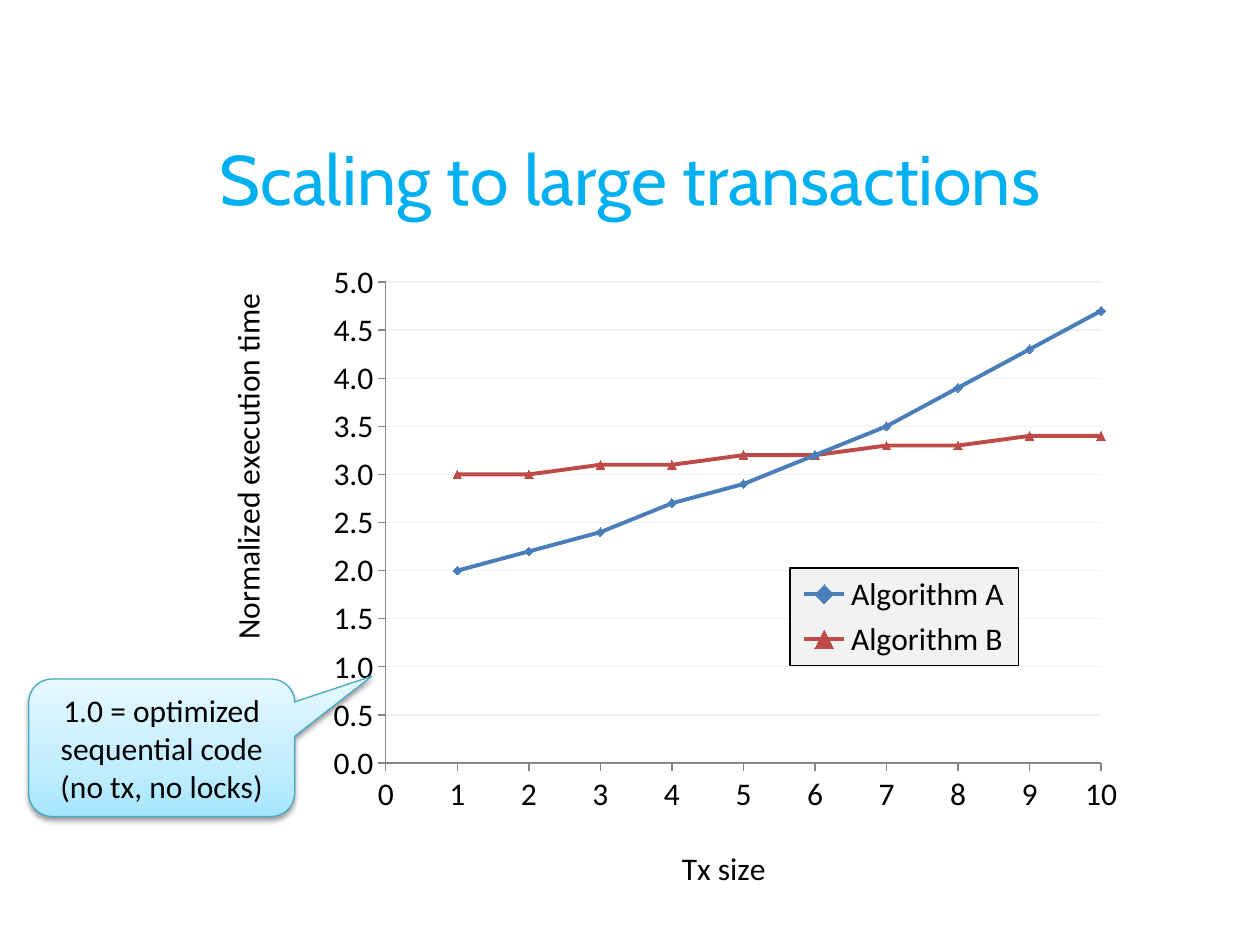
import copy

import lxml.etree
import pptx
import pptx.chart.data
import pptx.dml.color
import pptx.enum.chart
import pptx.enum.shapes
import pptx.enum.text
import pptx.oxml
import pptx.oxml.ns
import pptx.util

Cm = pptx.util.Cm
Pt = pptx.util.Pt
RGBColor = pptx.dml.color.RGBColor
qn = pptx.oxml.ns.qn

BLACK = RGBColor(0x00, 0x00, 0x00)
SKY = RGBColor(0x00, 0xB0, 0xF0)
TEAL = RGBColor(0x46, 0xAA, 0xC5)
GRID = RGBColor(0xF2, 0xF2, 0xF2)
GRAY = RGBColor(0x86, 0x86, 0x86)
BLUE = RGBColor(0x4A, 0x7E, 0xBB)
RED = RGBColor(0xBE, 0x4B, 0x48)
PALE = RGBColor(0xE7, 0xF8, 0xFF)
LIGHT = RGBColor(0xC1, 0xED, 0xFF)
DEEP = RGBColor(0xA7, 0xE6, 0xFF)


def put_text(frame, text, size=18, face="Calibri", color=BLACK):
    """Fill a text frame with centred lines, one paragraph each."""
    frame.text = text
    for para in frame.paragraphs:
        para.alignment = pptx.enum.text.PP_ALIGN.CENTER
        for run in para.runs:
            run.font.size = Pt(size)
            run.font.name = face
            run.font.bold = False
            run.font.color.rgb = color


def place(part, index, **spots):
    """Give a chart part a manual layout, in fractions of the chart."""
    for old in part.findall(qn("c:layout")):
        part.remove(old)
    layout = lxml.etree.Element(qn("c:layout"))
    manual = lxml.etree.SubElement(layout, qn("c:manualLayout"))
    if part.tag == qn("c:plotArea"):
        lxml.etree.SubElement(manual, qn("c:layoutTarget")).set("val", "inner")
    for key in "xy":
        lxml.etree.SubElement(manual, qn(f"c:{key}Mode")).set("val", "edge")
    for key, spot in spots.items():
        lxml.etree.SubElement(manual, qn(f"c:{key}")).set("val", str(spot))
    part.insert(index, layout)


deck = pptx.Presentation()
deck.slide_width, deck.slide_height = Cm(25.4), Cm(19.05)
slide = deck.slides.add_slide(deck.slide_layouts[6])

# Title
title = slide.shapes.add_textbox(Cm(0), Cm(1.98), Cm(25.4), Cm(3.18)).text_frame
title.word_wrap = True
title.vertical_anchor = pptx.enum.text.MSO_ANCHOR.MIDDLE
put_text(title, "Scaling to large transactions", size=40, face="Cabin", color=SKY)

# Chart data
MARK = pptx.enum.chart.XL_MARKER_STYLE
lines = [
    ("Algorithm A", BLUE, MARK.DIAMOND, [2, 2.2, 2.4, 2.7, 2.9, 3.2, 3.5, 3.9, 4.3, 4.7]),
    ("Algorithm B", RED, MARK.TRIANGLE, [3, 3, 3.1, 3.1, 3.2, 3.2, 3.3, 3.3, 3.4, 3.4]),
]
data = pptx.chart.data.XyChartData()
for name, color, mark, times in lines:
    row = data.add_series(name)
    for size, time in enumerate(times, 1):
        row.add_data_point(size, time)

chart = slide.shapes.add_chart(
    pptx.enum.chart.XL_CHART_TYPE.XY_SCATTER_LINES,
    Cm(3.18), Cm(5.16), Cm(20.9), Cm(13.11), data).chart
chart.has_title = False
chart.font.size, chart.font.name = Pt(18), "Calibri"
chart.font.color.rgb = BLACK
plot = chart.plots[0]
plot.vary_by_categories = False
place(chart._chartSpace.chart.plotArea, 0, x=0.22, y=0.04, w=0.69, h=0.74)

# Series
for line, (name, color, mark, times) in zip(plot.series, lines):
    line.smooth = False
    line.format.line.color.rgb = color
    line.format.line.width = Pt(2.25)
    line.marker.style, line.marker.size = mark, 5
    line.marker.format.fill.solid()
    line.marker.format.fill.fore_color.rgb = color
    line.marker.format.line.color.rgb = color

# Axes
for axis, label, top, step, form, left, high in [
    (chart.category_axis, "Tx size", 10, 1, "General", 0.5, 0.9),
    (chart.value_axis, "Normalized execution time", 5, 0.5, "#,##0.0", 0.06, 0.05),
]:
    axis.minimum_scale, axis.maximum_scale, axis.major_unit = 0, top, step
    axis.major_tick_mark = pptx.enum.chart.XL_TICK_MARK.OUTSIDE
    axis.minor_tick_mark = pptx.enum.chart.XL_TICK_MARK.NONE
    axis.tick_labels.number_format = form
    axis.tick_labels.number_format_is_linked = False
    axis.format.line.color.rgb = GRAY
    axis.has_major_gridlines = axis is chart.value_axis or top == 5
    put_text(axis.axis_title.text_frame, label)
    place(axis.axis_title._element, 1, x=left, y=high)
chart.category_axis.has_major_gridlines = False
chart.value_axis.has_major_gridlines = True
grid = chart.value_axis.major_gridlines.format.line
grid.color.rgb, grid.width = GRID, Pt(0.75)
body = chart.value_axis.axis_title.text_frame._txBody.bodyPr
body.set("rot", "-5400000")
body.set("vert", "horz")

# Legend
chart.has_legend = True
legend = chart.legend
legend.position = pptx.enum.chart.XL_LEGEND_POSITION.RIGHT
legend.include_in_layout = True
legend.font.size, legend.font.name = Pt(18), "Calibri"
legend.font.color.rgb = BLACK
place(legend._element, 1, x=0.61, y=0.48, w=0.22, h=0.15)
legend._element.find(qn("c:txPr")).addprevious(pptx.oxml.parse_xml(
    f'<c:spPr {pptx.oxml.ns.nsdecls("c", "a")}>'
    f'<a:solidFill><a:srgbClr val="{GRID}"/></a:solidFill>'
    f'<a:ln w="9525"><a:solidFill><a:srgbClr val="{BLACK}"/></a:solidFill></a:ln>'
    '</c:spPr>'))

# Callout
note = slide.shapes.add_shape(
    pptx.enum.shapes.MSO_SHAPE.ROUNDED_RECTANGULAR_CALLOUT,
    Cm(0.58), Cm(13.69), Cm(5.36), Cm(2.77))
for index, shift in enumerate([0.79, -0.52, 0.17]):
    note.adjustments[index] = shift
note.line.color.rgb, note.line.width = TEAL, Pt(0.75)
note.text_frame.word_wrap = True
note.text_frame.vertical_anchor = pptx.enum.text.MSO_ANCHOR.MIDDLE
put_text(note.text_frame, "1.0 = optimized sequential code\n(no tx, no locks)")

# Callout gradient, with a middle stop
note.fill.gradient()
note.fill.gradient_angle = 90
first = note._element.spPr.find(".//" + qn("a:gs"))
first.addnext(copy.deepcopy(first))
for stop, (spot, color) in zip(note.fill.gradient_stops,
                               [(0, DEEP), (0.35, LIGHT), (1, PALE)]):
    stop.position = spot
    stop.color.rgb = color

# Callout shadow
note.shadow.inherit = False
note._element.spPr.find(qn("a:effectLst")).append(pptx.oxml.parse_xml(
    f'<a:outerShdw {pptx.oxml.ns.nsdecls("a")} blurRad="{Pt(3.1)}" dist="{Pt(1.6)}"'
    ' dir="5400000" rotWithShape="0">'
    f'<a:srgbClr val="{BLACK}"><a:alpha val="38000"/></a:srgbClr></a:outerShdw>'))

deck.save("out.pptx")
